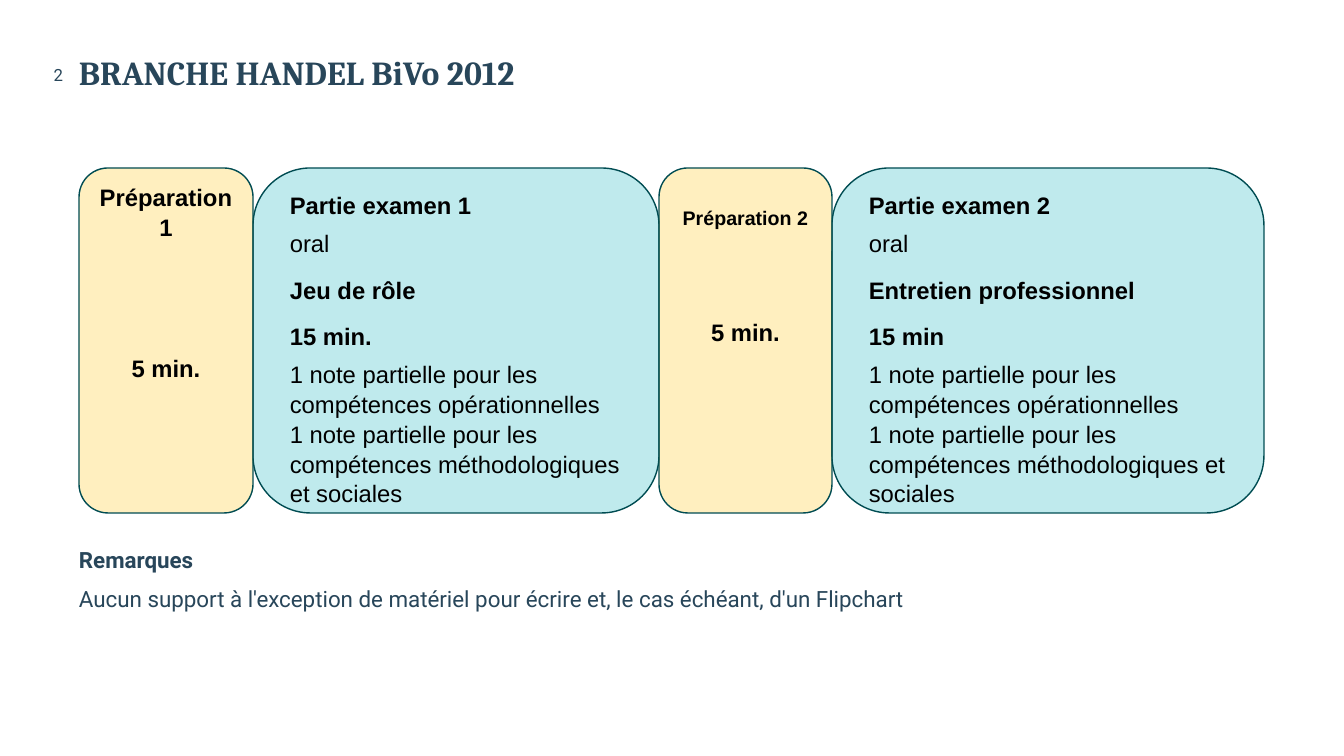
from lxml.etree import SubElement
from pptx import Presentation
from pptx.dml.color import RGBColor
from pptx.enum.shapes import MSO_SHAPE
from pptx.enum.text import MSO_ANCHOR, PP_ALIGN
from pptx.oxml.ns import qn
from pptx.util import Emu, Pt

NAVY, TEAL, CYAN, AMBER, BLACK = "28465A", "004C52", "00ADBA", "FFC000", "000000"


def px(length):
    return Emu(round(length * 914400 / 100.8))


def color(code):
    return RGBColor.from_string(code)


class ExamSlide:
    def __init__(self, deck):
        self.page = deck.slides.add_slide(deck.slide_layouts[6])

    def set_lines(self, frame, lines, font, ink, insets, spacing,
                  align=PP_ALIGN.LEFT, anchor=MSO_ANCHOR.TOP):
        frame.word_wrap = True
        frame.vertical_anchor = anchor
        (frame.margin_left, frame.margin_top,
         frame.margin_right, frame.margin_bottom) = map(px, insets)
        for index, (text, size, bold, before, after) in enumerate(lines):
            para = frame.add_paragraph() if index else frame.paragraphs[0]
            para.text = text
            para.alignment = align
            para.line_spacing = spacing
            para.space_before, para.space_after = Pt(before), Pt(after)
            para.font.name, para.font.size = font, Pt(size)
            para.font.bold = bold
            para.font.color.rgb = color(ink)

    def text(self, area, lines, font, spacing, **layout):
        box = self.page.shapes.add_textbox(*map(px, area))
        self.set_lines(box.text_frame, lines, font, NAVY, (0, 0, 0, 0), Pt(spacing), **layout)

    def panel(self, left, right, tint, lines, insets, align):
        box = self.page.shapes.add_shape(
            MSO_SHAPE.ROUNDED_RECTANGLE, px(left), px(168), px(right - left), px(345))
        box.shadow.inherit = False
        box.fill.solid()
        box.fill.fore_color.rgb = color(tint)
        tone = box.element.spPr.find(qn("a:solidFill"))[0]
        SubElement(tone, qn("a:alpha")).set("val", "25000")
        box.line.color.rgb = color(TEAL)
        box.line.width = Pt(1)
        self.set_lines(box.text_frame, lines, "Arial", BLACK, insets, 1.04, align)

    def exam(self, left, right, heading, task, duration):
        lines = [
            (heading, 17, True, 0, 0),
            ("oral", 17, False, 6, 6),
            (task, 17, True, 6, 6),
            (duration, 17, True, 6, 6),
            ("1 note partielle pour les compétences opérationnelles", 17, False, 0, 0),
            ("1 note partielle pour les compétences méthodologiques et sociales",
             17, False, 0, 0),
        ]
        self.panel(left, right, CYAN, lines, (20, 5, 10, 5), PP_ALIGN.LEFT)

    def preparation(self, left, right, heading, size, top, gap):
        lines = [(heading, size, True, 0, 0), ("5 min.", 17, True, gap, 0)]
        self.panel(left, right, AMBER, lines, (10, top, 10, 5), PP_ALIGN.CENTER)


def main():
    deck = Presentation()
    deck.slide_width, deck.slide_height = px(1344), px(756)
    slide = ExamSlide(deck)
    slide.text((79, 47, 1265, 63), [("BRANCHE HANDEL BiVo 2012", 24, True, 0, 0)],
               "Cambria", 32)
    remarks = [
        ("Remarques", 16, True, 0, 0),
        ("Aucun support à l'exception de matériel pour écrire et, "
         "le cas échéant, d'un Flipchart", 16, False, 6, 0),
    ]
    slide.text((79, 542, 1225, 105), remarks, "Roboto", 22)
    slide.text((0, 64, 63, 21), [("2", 12, False, 0, 0)], "Roboto", 18,
               align=PP_ALIGN.RIGHT, anchor=MSO_ANCHOR.BOTTOM)
    edges = [79, 253, 659, 832, 1264]
    slide.exam(edges[1], edges[2], "Partie examen 1", "Jeu de rôle", "15 min.")
    slide.exam(edges[3], edges[4], "Partie examen 2", "Entretien professionnel", "15 min")
    slide.preparation(edges[0], edges[1], "Préparation 1", 17, 5, 80)
    slide.preparation(edges[2], edges[3], "Préparation 2", 14, 29, 62)
    deck.save("out.pptx")


if __name__ == "__main__":
    main()
